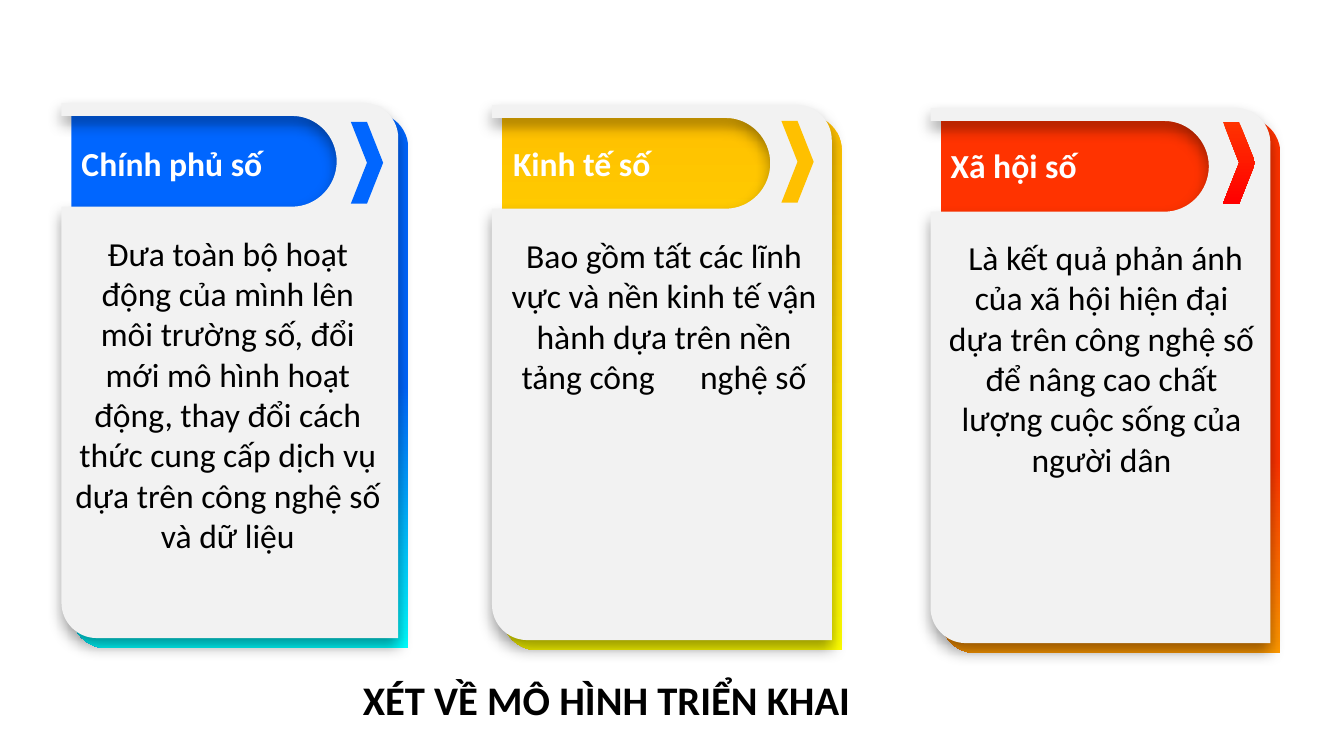
"""Build a slide with three cards on digital government, economy and society."""
import dataclasses

import pptx
import pptx.dml.color
import pptx.enum.shapes
import pptx.enum.text
import pptx.oxml
import pptx.oxml.ns
import pptx.util

Inches = pptx.util.Inches
Align = pptx.enum.text.PP_ALIGN
Kind = pptx.enum.shapes.MSO_SHAPE
qn = pptx.oxml.ns.qn


@dataclasses.dataclass(frozen=True)
class Theme:
    """Hold the colours, font and type sizes."""
    font: str = "Calibri"
    paper: str = "F2F2F2"
    ink: str = "000000"
    white: str = "FFFFFF"
    azure: str = "0066FF"
    amber: str = "FFC000"
    blue: tuple = ((0.51, "0066FF"), (1, "00FFFF"))
    gold: tuple = ((0, "FFC000"), (1, "FFFF00"))
    red: tuple = ((0.64, "FF3300"), (1, "FF9900"))
    flame: tuple = ((0, "FF3300"), (1, "FF0000"))
    size: int = 24
    head: int = 29


THEME = Theme()
HIGH = 5.31
GAP = 27

CARDS = (
    dict(left=0.61, top=1.02, wide=3.34, mark=(3.48, 1.21), shade=THEME.blue,
         tint=THEME.azure, name="Chính phủ số", tag=(0.71, 1.37, 2.55, 0.5),
         body=("Đưa toàn bộ hoạt động của mình lên môi trường số, đổi mới mô hình "
               "hoạt động, thay đổi cách thức cung cấp dịch vụ dựa trên công nghệ số "
               "và dữ liệu",), area=(0.63, 2.26, 3.26, 3.33)),
    dict(left=4.88, top=1.04, wide=3.37, mark=(7.75, 1.2), shade=THEME.gold,
         tint=THEME.amber, name="Kinh tế số", tag=(4.99, 1.37, 2.57, 0.5),
         body=("Bao gồm tất các lĩnh vực và nền kinh tế vận hành dựa trên nền "
               "tảng công", "nghệ số"), area=(4.94, 2.28, 3.29, 2.12)),
    dict(left=9.23, top=1.07, wide=3.37, mark=(12.13, 1.21), shade=THEME.red,
         tint=THEME.flame, name="Xã hội số", tag=(9.33, 1.39, 2.57, 0.5),
         body=("Là kết quả phản ánh của xã hội hiện đại dựa trên công nghệ số để "
               "nâng cao chất lượng cuộc sống của người dân",),
         area=(9.28, 2.3, 3.29, 2.52), indent=0.08),
)


def rgb(code):
    """Turn a hex code into a colour."""
    return pptx.dml.color.RGBColor.from_string(code)


def paint(shape, fill):
    """Fill a shape with one colour or a downward blend, without line or shadow."""
    shape.shadow.inherit = False
    shape.line.fill.background()
    if isinstance(fill, str):
        shape.fill.solid()
        shape.fill.fore_color.rgb = rgb(fill)
        return
    shape.fill.gradient()
    shape.fill.gradient_angle = 270
    for stop, (place, code) in zip(shape.fill.gradient_stops, fill):
        stop.position = place
        stop.color.rgb = rgb(code)


def preset(slide, kind, box, fill):
    """Add a painted preset shape."""
    shape = slide.shapes.add_shape(kind, *map(Inches, box))
    paint(shape, fill)
    return shape


def style(font, size, color, bold):
    """Apply the type format to a font."""
    look = dict(name=THEME.font, size=pptx.util.Pt(size), bold=bold)
    for key, value in look.items():
        setattr(font, key, value)
    font.color.rgb = rgb(color)


def write(slide, box, parts, size=THEME.size, color=THEME.ink, bold=False,
          align=Align.LEFT, indent=0):
    """Add a text box, with a wide gap between its parts."""
    frame = slide.shapes.add_textbox(*map(Inches, box)).text_frame
    frame.word_wrap = True
    frame.auto_size = pptx.enum.text.MSO_AUTO_SIZE.SHAPE_TO_FIT_TEXT
    para = frame.paragraphs[0]
    para.alignment = align
    if indent:
        para._p.get_or_add_pPr().set("indent", str(Inches(indent)))
    for index, part in enumerate(parts):
        if index:
            space = para.add_run()
            space.text = " "
            style(space.font, size, color, bold)
            space._r.get_or_add_rPr().set("spc", str(GAP * 100))
        run = para.add_run()
        run.text = part
        style(run.font, size, color, bold)


def cast(shape):
    """Add a soft shadow below a shape."""
    glow = shape._element.spPr.find(qn("a:effectLst"))
    glow.append(pptx.oxml.parse_xml(
        f'<a:outerShdw {pptx.oxml.ns.nsdecls("a")} blurRad="{pptx.util.Pt(11)}" '
        f'dist="{pptx.util.Pt(6)}" dir="5400000" algn="t" rotWithShape="0">'
        f'<a:srgbClr val="{THEME.ink}"><a:alpha val="40000"/></a:srgbClr>'
        '</a:outerShdw>'))


def curve(line, start, corner, end):
    """Turn a line into a quarter turn that leans towards a corner."""
    line.tag = qn("a:cubicBezTo")
    for index, (x, y) in enumerate((start, end)):
        spot = line.makeelement(qn("a:pt"), {
            "x": str(Inches(x + (corner[0] - x) * 0.55)),
            "y": str(Inches(y + (corner[1] - y) * 0.55))})
        line.insert(index, spot)


def sheet(slide, left, top, wide):
    """Add the pale sheet with a rounded notch for the name."""
    bend, curl, roof, sill = 0.35, 0.44, 0.13, 1.03
    tip, mid = wide - 0.61, (roof + sill) / 2
    steps = (((0, 0), None), ((wide - bend, 0), None),
             ((wide, bend), (wide, 0)), ((wide, HIGH), None),
             ((bend, HIGH), None), ((0, HIGH - bend), (0, HIGH)),
             ((0, sill), None), ((tip - curl, sill), None),
             ((tip, mid), (tip, sill)), ((tip - curl, roof), (tip, roof)),
             ((0, roof), None))
    spots = [(Inches(left + x), Inches(top + y)) for (x, y), _ in steps]
    pen = slide.shapes.build_freeform(*spots[0])
    pen.add_line_segments(spots[1:], close=True)
    shape = pen.convert_to_shape()
    lines = list(shape._element.iter(qn("a:lnTo")))
    for line, (start, _), (end, corner) in zip(lines, steps, steps[1:]):
        if corner:
            curve(line, start, corner, end)
    paint(shape, THEME.paper)
    cast(shape)


def card(slide, left, top, wide, mark, shade, tint, name, tag, body, area, indent=0):
    """Add one card with its back, sheet, chevron, name and body."""
    back = preset(slide, Kind.ROUND_2_DIAG_RECTANGLE,
                  (left + 0.1, top + 0.1, wide, HIGH), shade)
    back.adjustments[0] = 0.104
    back._element.spPr.find(qn("a:xfrm")).set("flipH", "1")
    sheet(slide, left, top, wide)
    preset(slide, Kind.CHEVRON, (*mark, 0.32, 0.81), tint)
    write(slide, tag, (name,), color=THEME.white, bold=True)
    write(slide, area, body, align=Align.CENTER, indent=indent)


def main():
    """Build and save the slide."""
    deck = pptx.Presentation()
    deck.slide_width, deck.slide_height = Inches(13.33), Inches(7.5)
    slide = deck.slides.add_slide(deck.slide_layouts[6])
    for item in CARDS:
        card(slide, **item)
    write(slide, (3.5, 6.65, 9.5, 0.58), ("XÉT VỀ MÔ HÌNH TRIỂN KHAI",),
          size=THEME.head, bold=True)
    deck.save("out.pptx")


if __name__ == "__main__":
    main()
